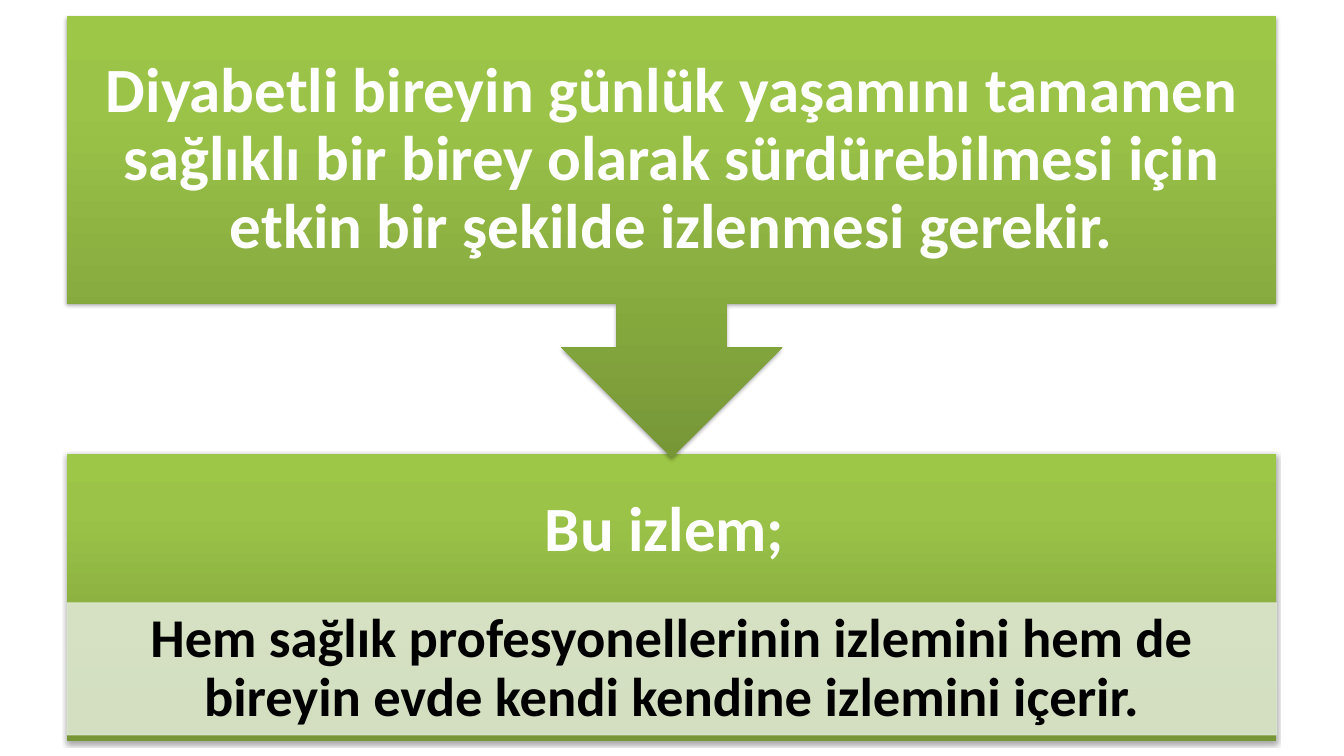
"""Build a slide on monitoring people with diabetes as two linked process steps."""
import copy
import dataclasses

import lxml.etree
import pptx
import pptx.dml.color
import pptx.dml.fill
import pptx.enum.shapes
import pptx.enum.text
import pptx.oxml.ns
import pptx.shapes.autoshape
import pptx.slide
import pptx.util

Cm = pptx.util.Cm
Pt = pptx.util.Pt
RGBColor = pptx.dml.color.RGBColor
MSO_SHAPE = pptx.enum.shapes.MSO_SHAPE
qn = pptx.oxml.ns.qn


@dataclasses.dataclass(frozen=True)
class Theme:
    """Colours and type sizes of the slide."""
    font: str = "Calibri"
    step_size: float = 45
    detail_size: float = 39
    step_text: str = "FFFFFF"
    detail_text: str = "000000"
    detail_fill: str = "DEE7D1"
    detail_alpha: int = 90
    shadow: str = "000000"
    shadow_alpha: int = 35
    gradient: tuple[tuple[float, str], ...] = ((0, "779737"), (0.8, "9BC348"), (1, "9DC746"))


@dataclasses.dataclass(frozen=True)
class Block:
    """A full-width block; lengths in cm, insets as left, top, right, bottom."""
    text: str
    top: float
    height: float
    insets: tuple[float, float, float, float]
    size: float
    colour: str
    outline: MSO_SHAPE = MSO_SHAPE.RECTANGLE
    adjustments: tuple[float, ...] = ()


THEME = Theme()
LEFT, WIDTH = 1.69, 30.48
STEP_INSET = 0.89
MONITORING_HEIGHT, MONITORING_HEADER = 7.24, 3.91

MONITORING = Block(
    "Bu izlem; ", 11.43, MONITORING_HEIGHT,
    (STEP_INSET, STEP_INSET, STEP_INSET, MONITORING_HEIGHT - MONITORING_HEADER + STEP_INSET),
    THEME.step_size, THEME.step_text)
SCOPE = Block(
    "Hem sağlık profesyonellerinin izlemini hem de bireyin evde kendi kendine izlemini içerir.",
    15.19, 3.33, (0.76, 0.13, 0.76, 0.13), THEME.detail_size, THEME.detail_text)
NEED = Block(
    "Diyabetli bireyin günlük yaşamını tamamen sağlıklı bir birey olarak "
    "sürdürebilmesi için etkin bir şekilde izlenmesi gerekir.",
    0.41, 11.13, (STEP_INSET,) * 4, THEME.step_size, THEME.step_text,
    MSO_SHAPE.DOWN_ARROW_CALLOUT, (0.25, 0.25, 0.25, 0.65))


def add_block(slide: pptx.slide.Slide, block: Block) -> pptx.shapes.autoshape.Shape:
    """Add a block with its centred bold text."""
    shape = slide.shapes.add_shape(
        block.outline, Cm(LEFT), Cm(block.top), Cm(WIDTH), Cm(block.height))
    for index, value in enumerate(block.adjustments):
        shape.adjustments[index] = value
    shape.shadow.inherit = False
    frame = shape.text_frame
    frame.word_wrap = True
    frame.vertical_anchor = pptx.enum.text.MSO_ANCHOR.MIDDLE
    frame.margin_left, frame.margin_top, frame.margin_right, frame.margin_bottom = map(
        Cm, block.insets)
    frame.text = block.text
    paragraph = frame.paragraphs[0]
    paragraph.alignment = pptx.enum.text.PP_ALIGN.CENTER
    paragraph.line_spacing = 0.9
    font = paragraph.runs[0].font
    font.name, font.size, font.bold = THEME.font, Pt(block.size), True
    font.color.rgb = RGBColor.from_string(block.colour)
    return shape


def set_alpha(colour: lxml.etree._Element, percent: int) -> None:
    """Set the opacity of a colour element."""
    lxml.etree.SubElement(colour, qn("a:alpha"), val=str(percent * 1000))


def style_step(shape: pptx.shapes.autoshape.Shape) -> None:
    """Give a step its green gradient and soft shadow."""
    shape.line.fill.background()
    shape.fill.gradient()
    shape.fill.gradient_angle = 90
    properties = shape._element.spPr
    stops = properties.find(".//" + qn("a:gsLst"))
    stops.append(copy.deepcopy(stops[-1]))
    for stop, (position, colour) in zip(shape.fill.gradient_stops, THEME.gradient):
        stop.position = position
        stop.color.rgb = RGBColor.from_string(colour)
    shadow = lxml.etree.SubElement(
        properties.find(qn("a:effectLst")), qn("a:outerShdw"),
        blurRad=str(Pt(3.1)), dist=str(Pt(1.8)), dir="5400000", rotWithShape="0")
    colour = lxml.etree.SubElement(shadow, qn("a:srgbClr"), val=THEME.shadow)
    set_alpha(colour, THEME.shadow_alpha)


def style_detail(shape: pptx.shapes.autoshape.Shape) -> None:
    """Give the detail strip its translucent fill and line."""
    shape.line.width = Pt(0.75)
    fills: tuple[pptx.dml.fill.FillFormat, ...] = (shape.fill, shape.line.fill)
    for fill in fills:
        fill.solid()
        fill.fore_color.rgb = RGBColor.from_string(THEME.detail_fill)
    for colour in shape._element.spPr.iter(qn("a:srgbClr")):
        set_alpha(colour, THEME.detail_alpha)


def main() -> None:
    """Build and save the presentation."""
    presentation = pptx.Presentation()
    presentation.slide_width, presentation.slide_height = Cm(33.87), Cm(19.05)
    slide = presentation.slides.add_slide(presentation.slide_layouts[6])
    for block, style in ((MONITORING, style_step), (SCOPE, style_detail), (NEED, style_step)):
        style(add_block(slide, block))
    presentation.save("out.pptx")


if __name__ == "__main__":
    main()
